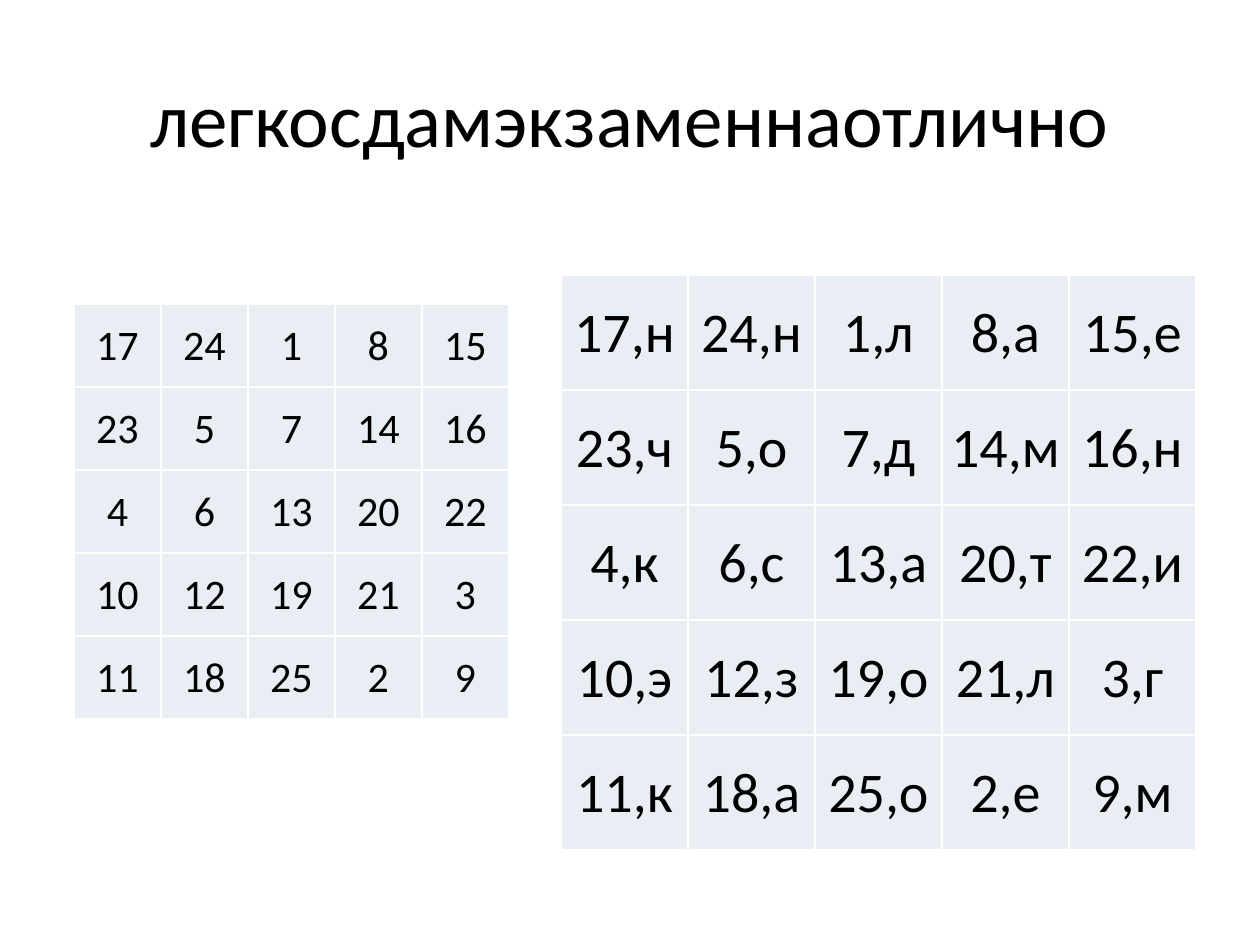
"""Build a slide with a 5 by 5 magic square and its letter key."""
from lxml import etree
from pptx import Presentation
from pptx import util as u
from pptx.dml.color import RGBColor
from pptx.enum import text
from pptx.oxml import ns

PX = u.Inches(1) / 126
FONT = "Calibri"
COLORS = {"ink": "000000", "cell": "E9EDF4", "border": "FFFFFF"}

PHRASE = "легкосдамэкзаменнаотлично"
PHRASE_BOX = (63, 38, 1134, 158)
PHRASE_SIZE = 44
MAGIC_SQUARE = [
    (17, 24, 1, 8, 15),
    (23, 5, 7, 14, 16),
    (4, 6, 13, 20, 22),
    (10, 12, 19, 21, 3),
    (11, 18, 25, 2, 9),
]
LETTER_SQUARE = [[f"{n},{PHRASE[n - 1]}" for n in row] for row in MAGIC_SQUARE]
SQUARES = [
    {"rows": LETTER_SQUARE, "corner": (561, 275), "cell": (127, 115), "size": 32},
    {"rows": MAGIC_SQUARE, "corner": (74, 304), "cell": (87, 83), "size": 24},
]


def px(length):
    return u.Emu(round(length * PX))


def write(frame, words, size):
    line = frame.paragraphs[0]
    line.alignment = text.PP_ALIGN.CENTER
    run = line.add_run()
    run.text = words
    run.font.name = FONT
    run.font.size = u.Pt(size)
    run.font.color.rgb = RGBColor.from_string(COLORS["ink"])


def add_borders(cell):
    properties = cell._tc.get_or_add_tcPr()
    for position, side in enumerate(("lnL", "lnR", "lnT", "lnB")):
        border = etree.Element(ns.qn(f"a:{side}"), w=str(u.Pt(1)))
        fill = etree.SubElement(border, ns.qn("a:solidFill"))
        etree.SubElement(fill, ns.qn("a:srgbClr"), val=COLORS["border"])
        properties.insert(position, border)


def add_square(slide, rows, corner, cell, size):
    width, height = cell
    count = len(rows)
    square = slide.shapes.add_table(
        count, count, *map(px, (*corner, width * count, height * count))
    ).table
    square.first_row = square.horz_banding = False
    for column in square.columns:
        column.width = px(width)
    for row, values in zip(square.rows, rows):
        row.height = px(height)
        for entry, value in zip(row.cells, values):
            entry.margin_left = entry.margin_right = entry.margin_top = px(1)
            entry.margin_bottom = 0
            entry.vertical_anchor = text.MSO_ANCHOR.MIDDLE
            entry.fill.solid()
            entry.fill.fore_color.rgb = RGBColor.from_string(COLORS["cell"])
            add_borders(entry)
            write(entry.text_frame, str(value), size)


def main():
    deck = Presentation()
    deck.slide_width, deck.slide_height = u.Inches(10), u.Inches(7.5)
    slide = deck.slides.add_slide(deck.slide_layouts[6])

    heading = slide.shapes.add_textbox(*map(px, PHRASE_BOX)).text_frame
    heading.word_wrap = True
    heading.vertical_anchor = text.MSO_ANCHOR.MIDDLE
    write(heading, PHRASE, PHRASE_SIZE)

    for square in SQUARES:
        add_square(slide, **square)
    deck.save("out.pptx")


if __name__ == "__main__":
    main()
